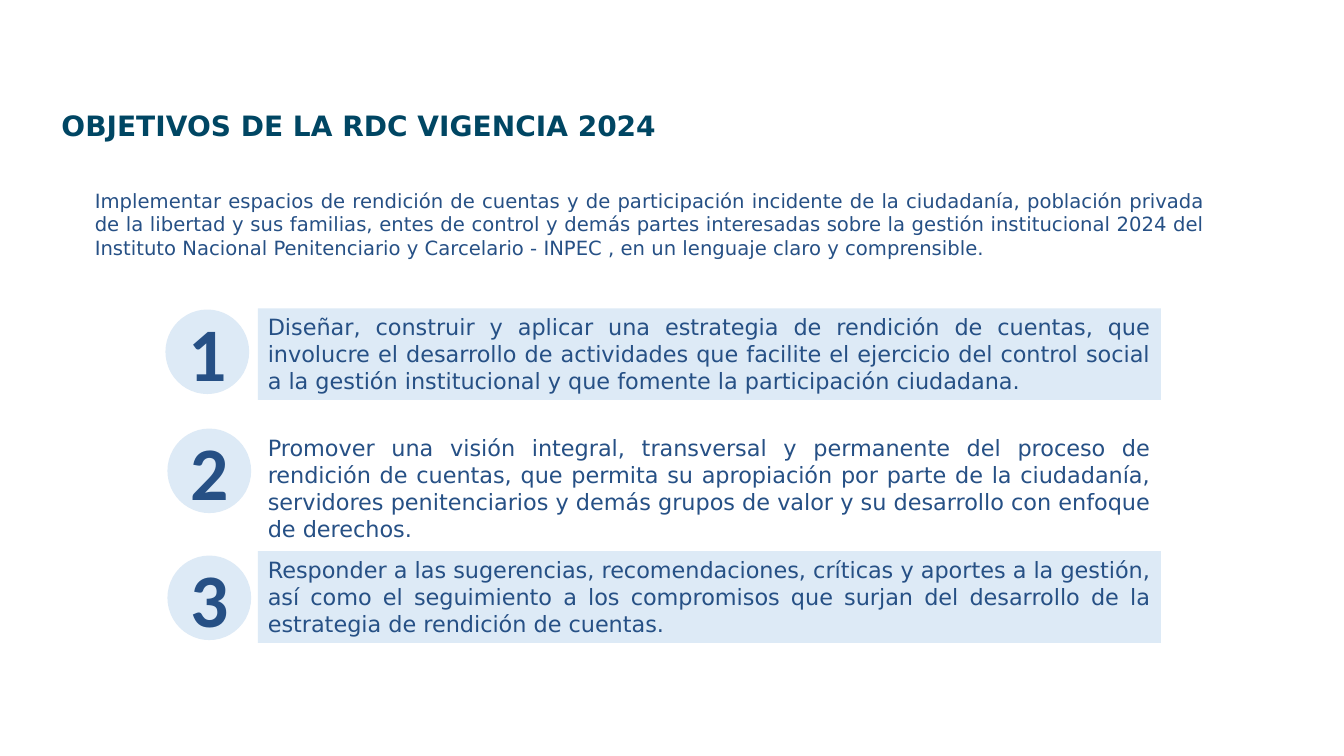
from pptx import Presentation, util as u
from pptx.dml import color
from pptx.enum import shapes, text

COLORS = {"title": "004663", "body": "265085", "pale": "DDEAF6", "white": "FFFFFF"}
BODY_FONT = "DejaVu Sans"
NUMBER_FONT = "Calibri"

TITLE = "OBJETIVOS DE LA RDC VIGENCIA 2024"
INTRO = (
    "Implementar espacios de rendición de cuentas y de participación incidente de la "
    "ciudadanía, población privada de la libertad y sus familias, entes de control y "
    "demás partes interesadas sobre la gestión institucional 2024 del Instituto Nacional "
    "Penitenciario y Carcelario - INPEC , en un lenguaje claro y comprensible."
)
# Each objective: panel top, panel height, panel fill, badge left, badge top, wording
OBJECTIVES = [
    (7.77, 2.31, "pale", 4.17, 7.8,
     "Diseñar, construir y aplicar una estrategia de rendición de cuentas, que involucre "
     "el desarrollo de actividades que facilite el ejercicio del control social a la "
     "gestión institucional y que fomente la participación ciudadana."),
    (10.82, 3.0, "white", 4.22, 10.8,
     "Promover una visión integral, transversal y permanente del proceso de rendición de "
     "cuentas, que permita su apropiación por parte de la ciudadanía, servidores "
     "penitenciarios y demás grupos de valor y su desarrollo con enfoque de derechos."),
    (13.89, 2.31, "pale", 4.22, 14.0,
     "Responder a las sugerencias, recomendaciones, críticas y aportes a la gestión, así "
     "como el seguimiento a los compromisos que surjan del desarrollo de la estrategia de "
     "rendición de cuentas."),
]


def write(shape, wording, size, align, ink="body", font=BODY_FONT, bold=False,
          anchor=text.MSO_ANCHOR.TOP, insets=(0.25, 0.13)):
    """Fill a shape with one paragraph of uniform text."""
    frame = shape.text_frame
    frame.word_wrap = True
    frame.vertical_anchor = anchor
    frame.margin_left = frame.margin_right = u.Cm(insets[0])
    frame.margin_top = frame.margin_bottom = u.Cm(insets[1])
    paragraph = frame.paragraphs[0]
    paragraph.text = wording
    paragraph.alignment = align
    paragraph.font.name = font
    paragraph.font.size = u.Pt(size)
    paragraph.font.bold = bold
    paragraph.font.color.rgb = color.RGBColor.from_string(COLORS[ink])


def add_panel(parent, preset, left, top, width, height, fill=None):
    """Add a borderless preset shape, filled or clear."""
    shape = parent.shapes.add_shape(
        preset, u.Cm(left), u.Cm(top), u.Cm(width), u.Cm(height))
    shape.shadow.inherit = False
    shape.line.fill.background()
    if fill:
        shape.fill.solid()
        shape.fill.fore_color.rgb = color.RGBColor.from_string(COLORS[fill])
    else:
        shape.fill.background()
    return shape


def add_title(slide):
    box = slide.shapes.add_textbox(u.Cm(1.37), u.Cm(2.41), u.Cm(23.95), u.Cm(1.52))
    write(box, TITLE, 20, text.PP_ALIGN.LEFT, ink="title", bold=True,
          anchor=text.MSO_ANCHOR.MIDDLE, insets=(0.18, 0.1))


def add_badge(slide, number, left, top):
    """Group a circle with its large number."""
    group = slide.shapes.add_group_shape()
    add_panel(group, shapes.MSO_SHAPE.OVAL, left, top, 2.11, 2.13, "pale")
    box = group.shapes.add_textbox(
        u.Cm(left + 0.32), u.Cm(top - 0.22), u.Cm(1.5), u.Cm(2.57))
    write(box, str(number), 54, text.PP_ALIGN.CENTER, font=NUMBER_FONT, bold=True)


def main():
    presentation = Presentation()
    presentation.slide_width = u.Cm(33.87)
    presentation.slide_height = u.Cm(19.05)
    slide = presentation.slides.add_slide(presentation.slide_layouts[6])

    # Heading and general objective
    add_title(slide)
    intro = add_panel(slide, shapes.MSO_SHAPE.FLOWCHART_ALTERNATE_PROCESS,
                      2.03, 4.52, 28.7, 2.26)
    write(intro, INTRO, 14, text.PP_ALIGN.JUSTIFY)

    # Numbered objectives
    for number, objective in enumerate(OBJECTIVES, start=1):
        top, height, fill, badge_left, badge_top, wording = objective
        panel = add_panel(slide, shapes.MSO_SHAPE.RECTANGLE, 6.5, top, 22.76, height, fill)
        write(panel, wording, 16, text.PP_ALIGN.JUSTIFY)
        add_badge(slide, number, badge_left, badge_top)

    presentation.save("out.pptx")


if __name__ == "__main__":
    main()
